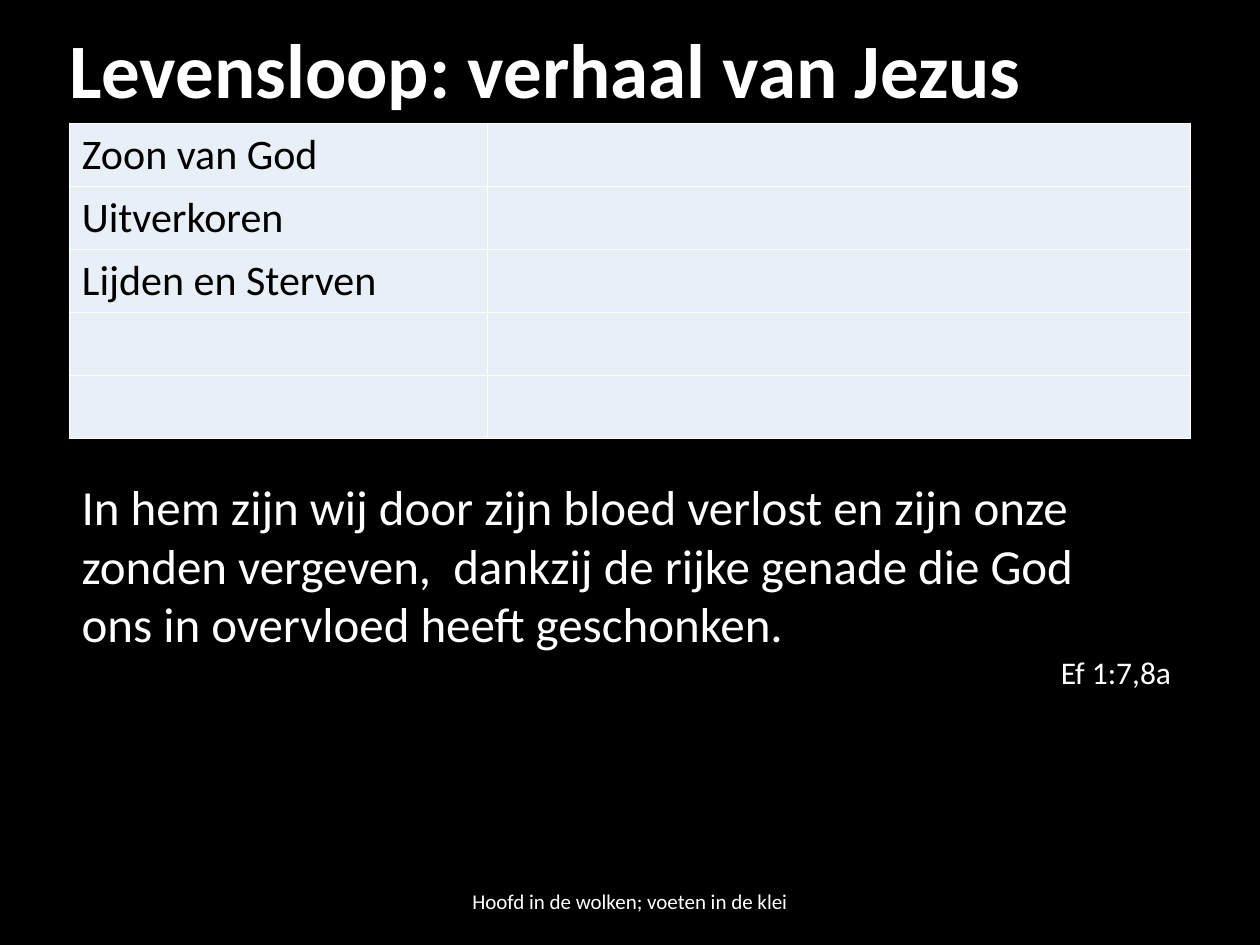
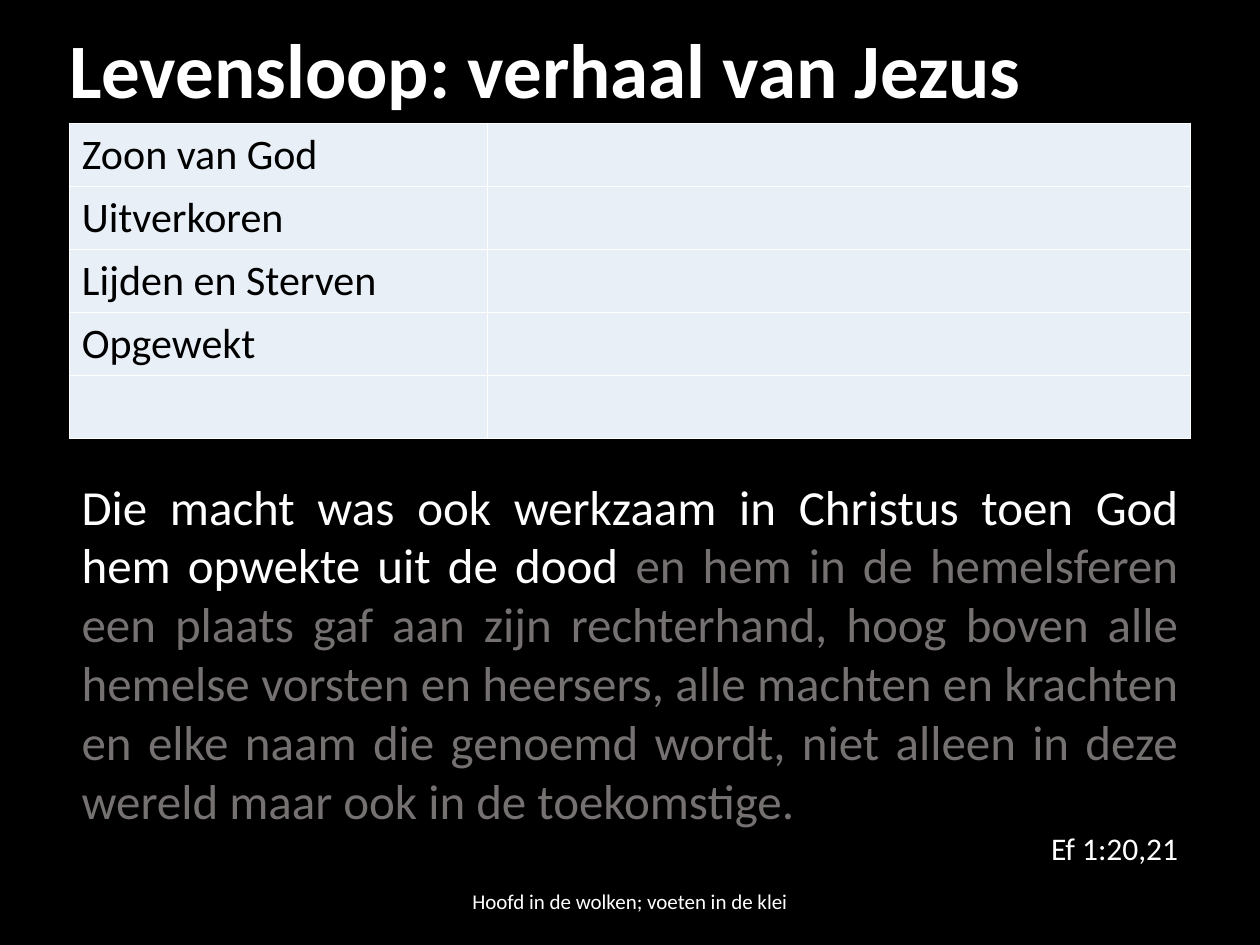
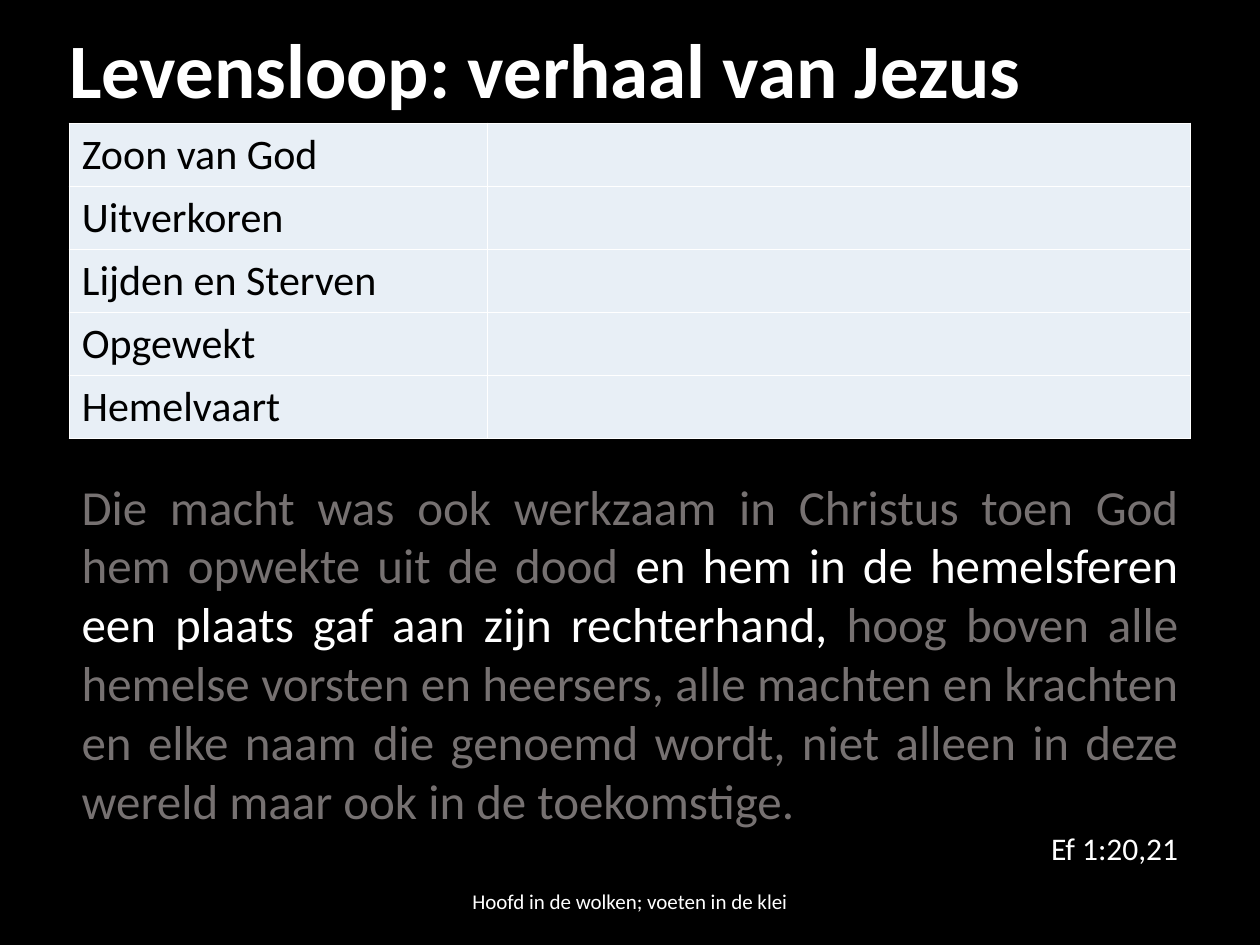
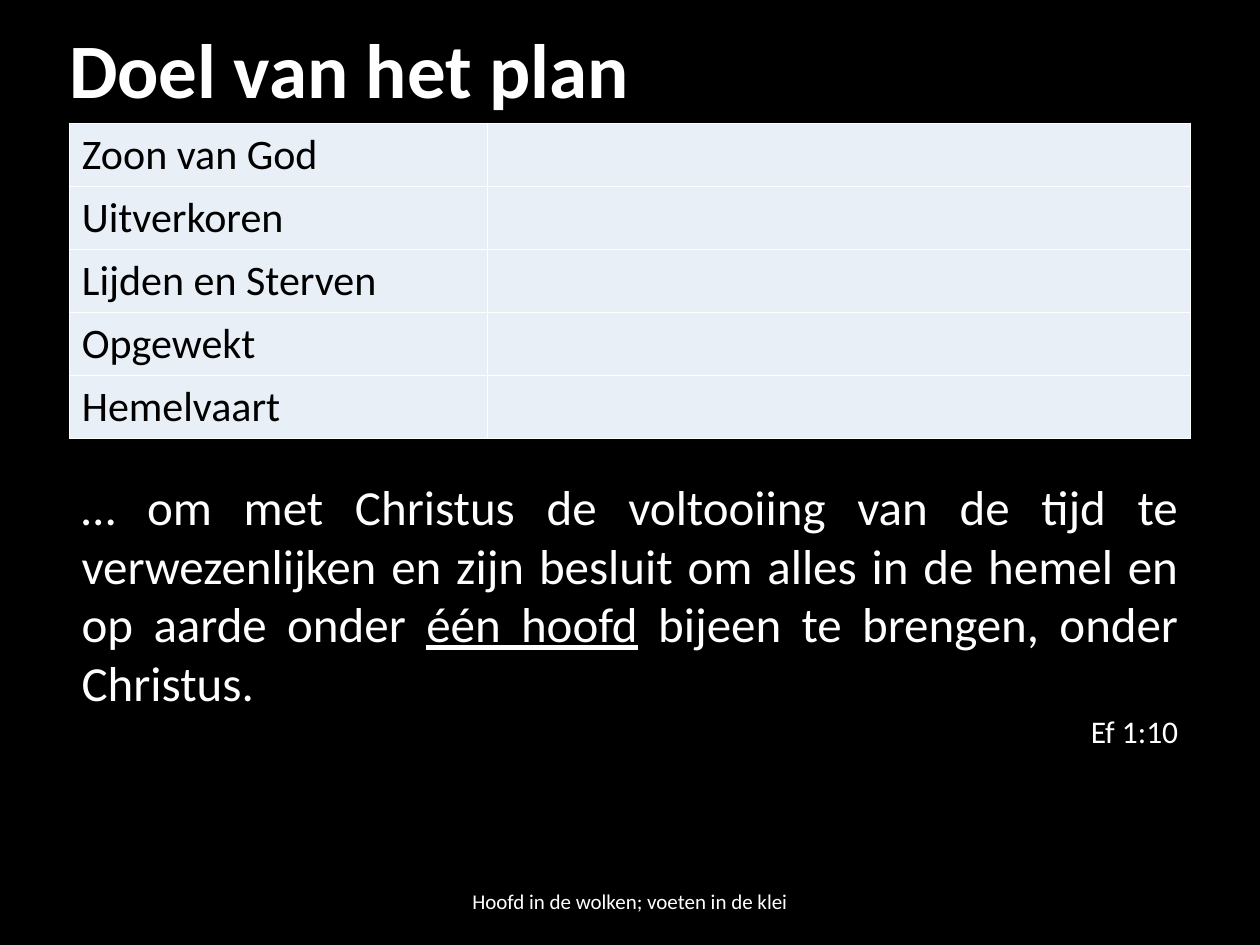
from lxml import etree
from pptx import Presentation
from pptx import util as u
from pptx.dml.color import RGBColor
from pptx.enum import text
from pptx.oxml.ns import qn

WIDTH, HEIGHT = 10, 7.5
MARGIN = 0.55
CONTENT_WIDTH = WIDTH - 2 * MARGIN
FONT = "Calibri"
COLORS = {
    "background": "000000",
    "light": "FFFFFF",
    "dimmed": "767171",
    "cell": "E8EFF6",
    "cell_text": "000000",
}

LIFE_TITLE = "Levensloop: verhaal van Jezus"
FOOTER = "Hoofd in de wolken; voeten in de klei"
STAGES = ["Zoon van God", "Uitverkoren", "Lijden en Sterven", "Opgewekt", "Hemelvaart"]
STAGE_SHARE = 0.373
ROW_HEIGHT = 0.5

RAISED = "Die macht was ook werkzaam in Christus toen God hem opwekte uit de dood "
SEATED = "en hem in de hemelsferen een plaats gaf aan zijn rechterhand, "
EXALTED = (
    "hoog boven alle hemelse vorsten en heersers, alle machten en krachten en elke naam "
    "die genoemd wordt, niet alleen in deze wereld maar ook in de toekomstige."
)

LEFT, CENTER = text.PP_ALIGN.LEFT, text.PP_ALIGN.CENTER
RIGHT, JUSTIFY = text.PP_ALIGN.RIGHT, text.PP_ALIGN.JUSTIFY


def rgb(name):
    return RGBColor.from_string(COLORS[name])


def add_run(paragraph, words, size, color="light", bold=None, underline=None):
    run = paragraph.add_run()
    run.text = words
    font = run.font
    font.name, font.size = FONT, u.Pt(size)
    font.bold, font.underline = bold, underline
    font.color.rgb = rgb(color)


def add_text_frame(slide, left, top, width, height, anchor=text.MSO_ANCHOR.MIDDLE):
    box = slide.shapes.add_textbox(*map(u.Inches, (left, top, width, height)))
    frame = box.text_frame
    frame.word_wrap = True
    frame.vertical_anchor = anchor
    return frame


def add_title(slide, title):
    paragraph = add_text_frame(slide, 0.45, 0.19, 8.86, 0.78).paragraphs[0]
    paragraph.line_spacing = 0.9
    add_run(paragraph, title, 44, bold=True)


def add_footer(slide):
    width = 3.38
    frame = add_text_frame(slide, (WIDTH - width) / 2, 6.95, width, 0.4)
    paragraph = frame.paragraphs[0]
    paragraph.alignment = CENTER
    add_run(paragraph, FOOTER, 12)


def add_borders(cell):
    properties = cell._tc.get_or_add_tcPr()
    for side in ("a:lnL", "a:lnR", "a:lnT", "a:lnB"):
        line = etree.SubElement(properties, qn(side), w=str(u.Pt(1)))
        fill = etree.SubElement(line, qn("a:solidFill"))
        etree.SubElement(fill, qn("a:srgbClr"), val=COLORS["light"])


def add_stage_table(slide, shown):
    """List the first `shown` stages; the other rows stay empty."""
    rows = len(STAGES)
    table = slide.shapes.add_table(
        rows, 2, u.Inches(MARGIN), u.Inches(0.98),
        u.Inches(CONTENT_WIDTH), u.Inches(rows * ROW_HEIGHT),
    ).table
    table.first_row = table.horz_banding = False
    for column, share in zip(table.columns, (STAGE_SHARE, 1 - STAGE_SHARE)):
        column.width = u.Inches(CONTENT_WIDTH * share)
    for cell in table.iter_cells():
        add_borders(cell)
        cell.fill.solid()
        cell.fill.fore_color.rgb = rgb("cell")
    for row, stage in enumerate(STAGES[:shown]):
        add_run(table.cell(row, 0).text_frame.paragraphs[0], stage, 24, "cell_text")


def add_quote(slide, parts, reference, height, alignment=JUSTIFY):
    """Add a verse from (words, run format) parts, with its reference below."""
    frame = add_text_frame(slide, MARGIN, 3.73, CONTENT_WIDTH, height, text.MSO_ANCHOR.TOP)
    frame.auto_size = text.MSO_AUTO_SIZE.SHAPE_TO_FIT_TEXT
    verse = frame.paragraphs[0]
    verse.alignment = alignment
    for words, run_format in parts:
        for number, line in enumerate(words.split("\n")):
            if number:
                verse.add_line_break()
            add_run(verse, line, 28, **run_format)
    source = frame.add_paragraph()
    source.alignment = RIGHT
    add_run(source, reference, 18)


def add_slide(prs, title, shown, *quote):
    slide = prs.slides.add_slide(prs.slide_layouts[6])
    add_title(slide, title)
    add_stage_table(slide, shown)
    add_footer(slide)
    add_quote(slide, *quote)


def main():
    prs = Presentation()
    prs.slide_width, prs.slide_height = u.Inches(WIDTH), u.Inches(HEIGHT)
    background = prs.slide_master.background.fill
    background.solid()
    background.fore_color.rgb = rgb("background")

    plain, dimmed, underlined = {}, {"color": "dimmed"}, {"underline": True}
    redemption = [(
        "In hem zijn wij door zijn bloed verlost en zijn onze zonden vergeven,  "
        "dankzij de rijke genade die God \nons in overvloed heeft geschonken.", plain,
    )]
    resurrection = [(RAISED, plain), (SEATED + EXALTED, dimmed)]
    ascension = [(RAISED, dimmed), (SEATED, plain), (EXALTED, dimmed)]
    purpose = [
        ("… om met Christus de voltooiing van de tijd te verwezenlijken en zijn besluit "
         "om alles in de hemel en op aarde onder ", plain),
        ("één hoofd", underlined),
        (" bijeen te brengen, onder Christus.", plain),
    ]

    add_slide(prs, LIFE_TITLE, 3, redemption, "Ef 1:7,8a ", 2.29, LEFT)
    add_slide(prs, LIFE_TITLE, 4, resurrection, "Ef 1:20,21", 3.23)
    add_slide(prs, LIFE_TITLE, 5, ascension, "Ef 1:20,21", 3.23)
    add_slide(prs, "Doel van het plan", 5, purpose, "Ef 1:10", 2.29)
    prs.save("out.pptx")


if __name__ == "__main__":
    main()
